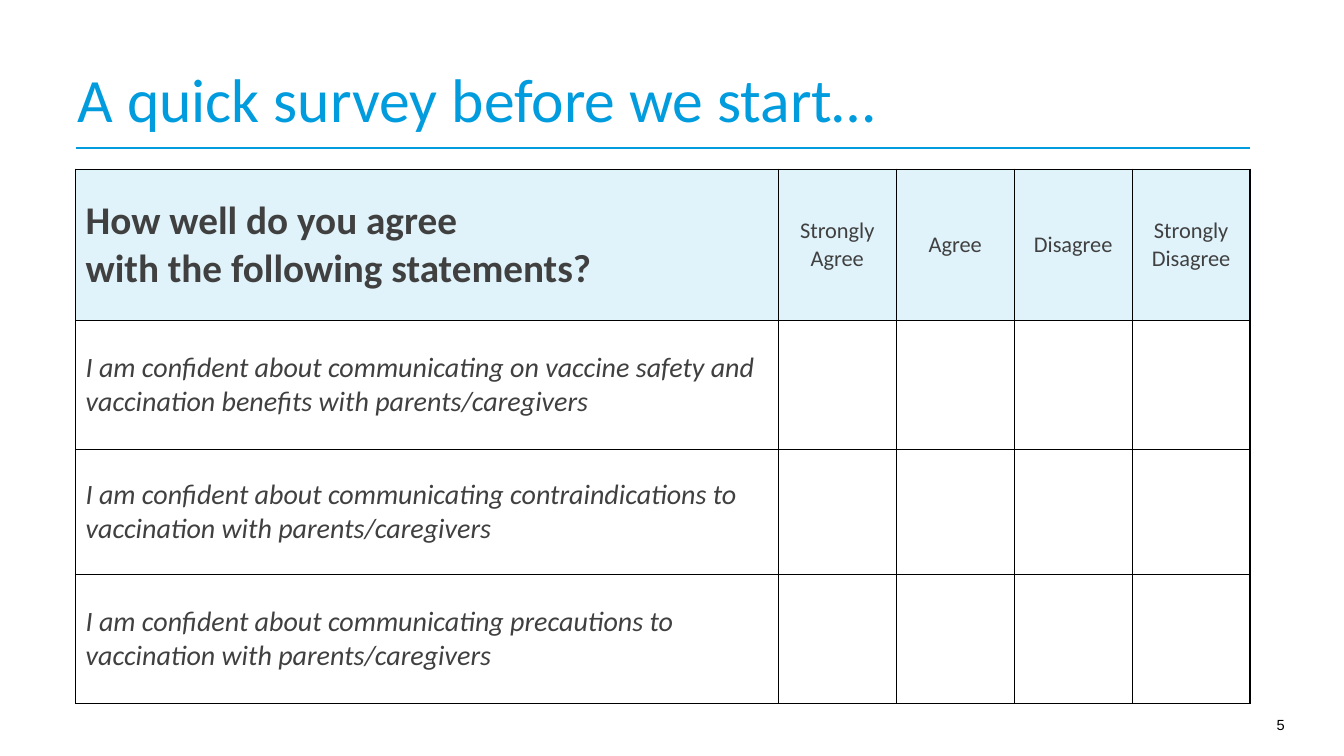
from lxml.etree import SubElement
from pptx import Presentation
from pptx.dml.color import RGBColor
from pptx.enum.shapes import MSO_CONNECTOR as Connector
from pptx.enum.text import MSO_ANCHOR as Anchor, MSO_AUTO_SIZE as AutoSize, PP_ALIGN as Align
from pptx.oxml.ns import qn
from pptx.util import Pt

EMU_PER_PX = 9144
BLUE = RGBColor(0x00, 0x9C, 0xDE)
PALE_BLUE = RGBColor(0xE0, 0xF3, 0xFB)
DARK_GREY = RGBColor(0x40, 0x40, 0x40)
BLACK = RGBColor(0x00, 0x00, 0x00)

TITLE = dict(name="Calibri", size=Pt(44), color=BLUE)
QUESTION = dict(name="Calibri", size=Pt(28), bold=True, color=DARK_GREY)
ANSWER = dict(name="Calibri", size=Pt(16), bold=False, color=DARK_GREY)
STATEMENT = dict(name="Calibri", size=Pt(20), bold=False, italic=True, color=DARK_GREY)
PAGE = dict(name="Arial", size=Pt(10.5), color=BLACK)

QUESTION_TEXT = "How well do you agree\nwith the following statements?"
ANSWERS = ["Strongly Agree", "Agree", "Disagree", "Strongly Disagree"]
STATEMENTS = [
    "I am confident about communicating on vaccine safety and vaccination benefits with parents/caregivers",
    "I am confident about communicating contraindications to vaccination with parents/caregivers",
    "I am confident about communicating precautions to vaccination with parents/caregivers",
]


def px(*lengths):
    return [length * EMU_PER_PX for length in lengths]


class SurveySlide:
    def __init__(self, deck):
        self.slide = deck.slides.add_slide(deck.slide_layouts[5])
        self.shapes = self.slide.shapes

    def set_text(self, frame, text, style, align=Align.LEFT):
        frame.text = text
        for paragraph in frame.paragraphs:
            paragraph.alignment = align
            for run in paragraph.runs:
                for key, value in style.items():
                    if key == "color":
                        run.font.color.rgb = value
                    else:
                        setattr(run.font, key, value)

    def title(self, text, box):
        heading = self.shapes.title
        heading.left, heading.top, heading.width, heading.height = px(*box)
        frame = heading.text_frame
        margins = px(2, 0, 39, 0)
        frame.margin_left, frame.margin_top, frame.margin_right, frame.margin_bottom = margins
        frame.auto_size = AutoSize.NONE
        frame.vertical_anchor = Anchor.BOTTOM
        self.set_text(frame, text, TITLE)
        frame.paragraphs[0].line_spacing = 0.9

    def rule(self, start, end):
        line = self.shapes.add_connector(Connector.STRAIGHT, *px(*start, *end))
        line.line.color.rgb = BLUE
        line.line.width = Pt(1.5)
        SubElement(line._element.spPr, qn("a:effectLst"))

    def page_number(self, text, box):
        frame = self.shapes.add_textbox(*px(*box)).text_frame
        frame.word_wrap = True
        self.set_text(frame, text, PAGE, Align.RIGHT)

    def border(self, cell):
        properties = cell._tc.get_or_add_tcPr()
        for side in ("lnL", "lnR", "lnT", "lnB"):
            edge = SubElement(properties, qn(f"a:{side}"), w=str(Pt(1)))
            fill = SubElement(edge, qn("a:solidFill"))
            SubElement(fill, qn("a:srgbClr"), val=str(BLACK))

    def survey(self, left, top, widths, heights):
        box = px(left, top, sum(widths), sum(heights))
        table = self.shapes.add_table(len(heights), len(widths), *box).table
        table.first_row = table.horz_banding = False
        for column, width in zip(table.columns, px(*widths)):
            column.width = width
        for row, height in zip(table.rows, px(*heights)):
            row.height = height
        for cell in table.iter_cells():
            self.border(cell)
            cell.vertical_anchor = Anchor.MIDDLE
            cell.fill.background()
        for cell in table.rows[0].cells:
            cell.fill.solid()
            cell.fill.fore_color.rgb = PALE_BLUE
        self.set_text(table.cell(0, 0).text_frame, QUESTION_TEXT, QUESTION)
        for column, answer in enumerate(ANSWERS, 1):
            self.set_text(table.cell(0, column).text_frame, answer, ANSWER, Align.CENTER)
        for row, statement in enumerate(STATEMENTS, 1):
            self.set_text(table.cell(row, 0).text_frame, statement, STATEMENT)


def main():
    deck = Presentation()
    deck.slide_width, deck.slide_height = px(1333, 750)
    page = SurveySlide(deck)
    page.page_number("5", (1195, 705, 89, 29))
    page.rule((75, 147), (1240, 147))
    page.title("A quick survey before we start…", (75, 75, 1123, 60))
    page.survey(75, 168, [697] + [117] * len(ANSWERS), [150, 128, 124, 128])
    deck.save("out.pptx")


if __name__ == "__main__":
    main()
